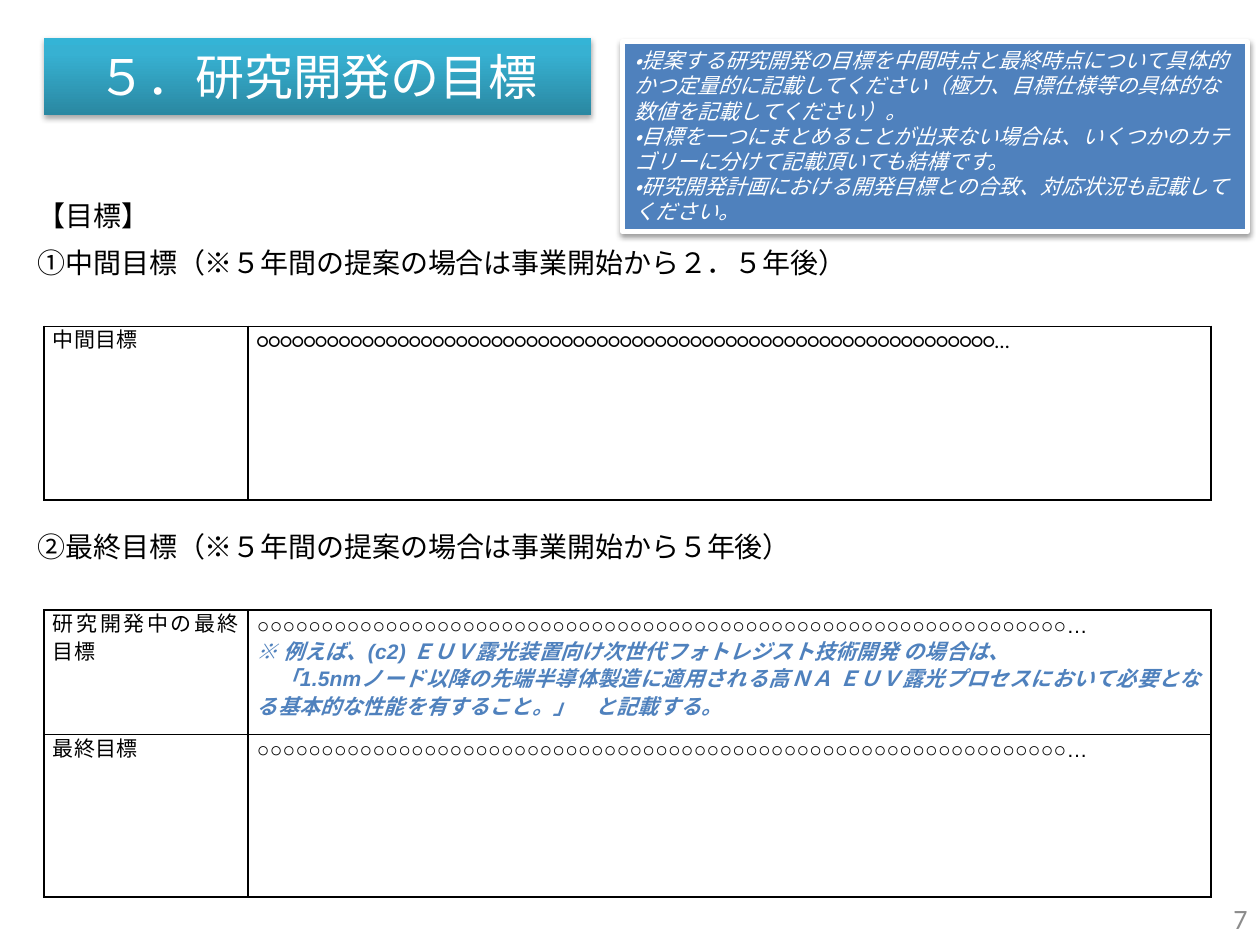
from dataclasses import dataclass

from lxml import etree
from pptx import Presentation
from pptx.dml.color import RGBColor
from pptx.enum import lang, shapes, text
from pptx.oxml import parse_xml
from pptx.oxml.ns import nsdecls, qn
from pptx.util import Inches, Pt


@dataclass(frozen=True)
class Theme:
    black: str = "000000"
    white: str = "FFFFFF"
    blue: str = "4F81BD"
    gray: str = "8C8C8C"
    title_stops: tuple = ((0, "2A88A2"), (80, "37B1D2"), (100, "34B4D6"))
    title_size: int = 28
    heading_size: int = 16
    body_size: int = 12
    font: str = "Arial"
    alt_font: str = "Calibri"


THEME = Theme()
ALIGN = text.PP_ALIGN
ANCHOR = text.MSO_ANCHOR
PLACEHOLDER = "○" * 63 + "…"


def write_paragraph(para, words, size=THEME.body_size, font=THEME.font,
                    color=THEME.black, bold=False, italic=False,
                    align=ALIGN.LEFT, line=None, spacing=None):
    para.alignment = align
    if line:
        para.line_spacing = Pt(line)
    span = para.add_run()
    span.text = words
    span.font.size = Pt(size)
    span.font.name = font
    span.font.bold = bold
    span.font.italic = italic
    span.font.color.rgb = RGBColor.from_string(color)
    span.font.language_id = lang.MSO_LANGUAGE_ID.JAPANESE
    if spacing:
        span.font._element.set("spc", str(round(spacing * 100)))


def write_lines(frame, lines, **style):
    """Fill a text frame; a line is a string or a (string, overrides) pair."""
    for index, item in enumerate(lines):
        words, extra = (item, {}) if isinstance(item, str) else item
        para = frame.paragraphs[0] if index == 0 else frame.add_paragraph()
        write_paragraph(para, words, **{**style, **extra})


def add_shadow(shape, opacity, blur, distance):
    shape.shadow.inherit = False
    effects = shape._element.spPr.find(qn("a:effectLst"))
    effects.append(parse_xml(
        f'<a:outerShdw {nsdecls("a")} blurRad="{Pt(blur)}" dist="{Pt(distance)}" '
        f'dir="5400000" rotWithShape="0"><a:srgbClr val="{THEME.black}">'
        f'<a:alpha val="{opacity * 1000}"/></a:srgbClr></a:outerShdw>'))


def fill_gradient(shape, stops):
    """Run the stops from the bottom edge to the top edge."""
    shape.fill.gradient()
    shape.fill.gradient_angle = 90
    stop_list = shape._element.spPr.find(qn("a:gradFill")).find(qn("a:gsLst"))
    for old in list(stop_list):
        stop_list.remove(old)
    for position, color in stops:
        stop = etree.SubElement(stop_list, qn("a:gs"), pos=str(position * 1000))
        etree.SubElement(stop, qn("a:srgbClr"), val=color)


def border_cell(cell, color, width):
    properties = cell._tc.get_or_add_tcPr()
    for side in "LRTB":
        properties.append(parse_xml(
            f'<a:ln{side} {nsdecls("a")} w="{Pt(width)}"><a:solidFill>'
            f'<a:srgbClr val="{color}"/></a:solidFill></a:ln{side}>'))


class SlideBuilder:
    def __init__(self, page, theme):
        self.page = page
        self.theme = theme

    def rectangle(self, left, top, width, height, lines, anchor=ANCHOR.TOP, **style):
        box = self.page.shapes.add_shape(
            shapes.MSO_SHAPE.RECTANGLE,
            Inches(left), Inches(top), Inches(width), Inches(height))
        box.text_frame.word_wrap = True
        box.text_frame.vertical_anchor = anchor
        write_lines(box.text_frame, lines, color=self.theme.white, **style)
        return box

    def title(self, *place, words):
        box = self.rectangle(*place, [words], anchor=ANCHOR.MIDDLE,
                             size=self.theme.title_size, align=ALIGN.CENTER)
        fill_gradient(box, self.theme.title_stops)
        box.line.fill.background()
        add_shadow(box, opacity=35, blur=3.1, distance=1.8)

    def guidance(self, *place, lines):
        box = self.rectangle(*place, lines, italic=True)
        box.fill.solid()
        box.fill.fore_color.rgb = RGBColor.from_string(self.theme.blue)
        box.line.color.rgb = RGBColor.from_string(self.theme.white)
        box.line.width = Pt(3)
        add_shadow(box, opacity=38, blur=3.1, distance=1.6)

    def label(self, left, top, width, height, words, anchor=ANCHOR.TOP, **style):
        box = self.page.shapes.add_textbox(
            Inches(left), Inches(top), Inches(width), Inches(height))
        box.text_frame.word_wrap = True
        box.text_frame.vertical_anchor = anchor
        write_lines(box.text_frame, [words],
                    **{"size": self.theme.heading_size, **style})

    def goal_table(self, top, row_heights, rows, font):
        column_widths = (1.62, 7.64)
        table = self.page.shapes.add_table(
            len(rows), len(column_widths), Inches(0.35), Inches(top),
            Inches(sum(column_widths)), Inches(sum(row_heights))).table
        table.first_row = table.horz_banding = False
        for column, width in zip(table.columns, column_widths):
            column.width = Inches(width)
        for row, height, contents in zip(table.rows, row_heights, rows):
            row.height = Inches(height)
            for cell, lines in zip(row.cells, contents):
                cell.margin_left = cell.margin_right = Inches(0.07)
                cell.margin_top = cell.margin_bottom = 0
                border_cell(cell, self.theme.black, 1)
                cell.fill.background()
                write_lines(cell.text_frame, lines, font=font,
                            align=ALIGN.JUSTIFY, line=15.8, spacing=0.1)


def main():
    deck = Presentation()
    deck.slide_width, deck.slide_height = Inches(10), Inches(7.5)
    slide = SlideBuilder(deck.slides.add_slide(deck.slide_layouts[6]), THEME)

    slide.title(0.35, 0.3, 4.34, 0.61, words="５．研究開発の目標")
    slide.guidance(4.94, 0.33, 4.96, 1.51, lines=[
        "・提案する研究開発の目標を中間時点と最終時点について具体的かつ定量的に"
        "記載してください（極力、目標仕様等の具体的な数値を記載してください）。",
        "・目標を一つにまとめることが出来ない場合は、いくつかのカテゴリーに分けて"
        "記載頂いても結構です。",
        "・研究開発計画における開発目標との合致、対応状況も記載してください。",
    ])

    slide.label(0.2, 1.9, 9.53, 0.37,
                "①中間目標（※５年間の提案の場合は事業開始から２．５年後）")
    slide.label(0.2, 4.15, 9.42, 0.37,
                "②最終目標（※５年間の提案の場合は事業開始から５年後）")
    slide.goal_table(2.59, [1.38], [(["中間目標"], [PLACEHOLDER])],
                     font=THEME.alt_font)
    slide.label(0.2, 1.53, 2.91, 0.37, "【目標】")

    example = {"color": THEME.blue, "bold": True, "italic": True}
    final_goal = [
        PLACEHOLDER,
        ("※ 例えば、(c2) ＥＵＶ露光装置向け次世代フォトレジスト技術開発 の場合は、",
         example),
        ("　「1.5nmノード以降の先端半導体製造に適用される高ＮＡ ＥＵＶ露光プロセスに"
         "おいて必要となる基本的な性能を有すること。」　と記載する。", example),
    ]
    slide.goal_table(4.84, [0.99, 1.29],
                     [(["研究開発中の最終目標"], final_goal),
                      (["最終目標"], [PLACEHOLDER])],
                     font=THEME.font)
    slide.label(7.67, 7.09, 2.33, 0.4, "7", anchor=ANCHOR.MIDDLE,
                font=THEME.alt_font, color=THEME.gray, align=ALIGN.RIGHT)

    deck.save("out.pptx")


if __name__ == "__main__":
    main()
